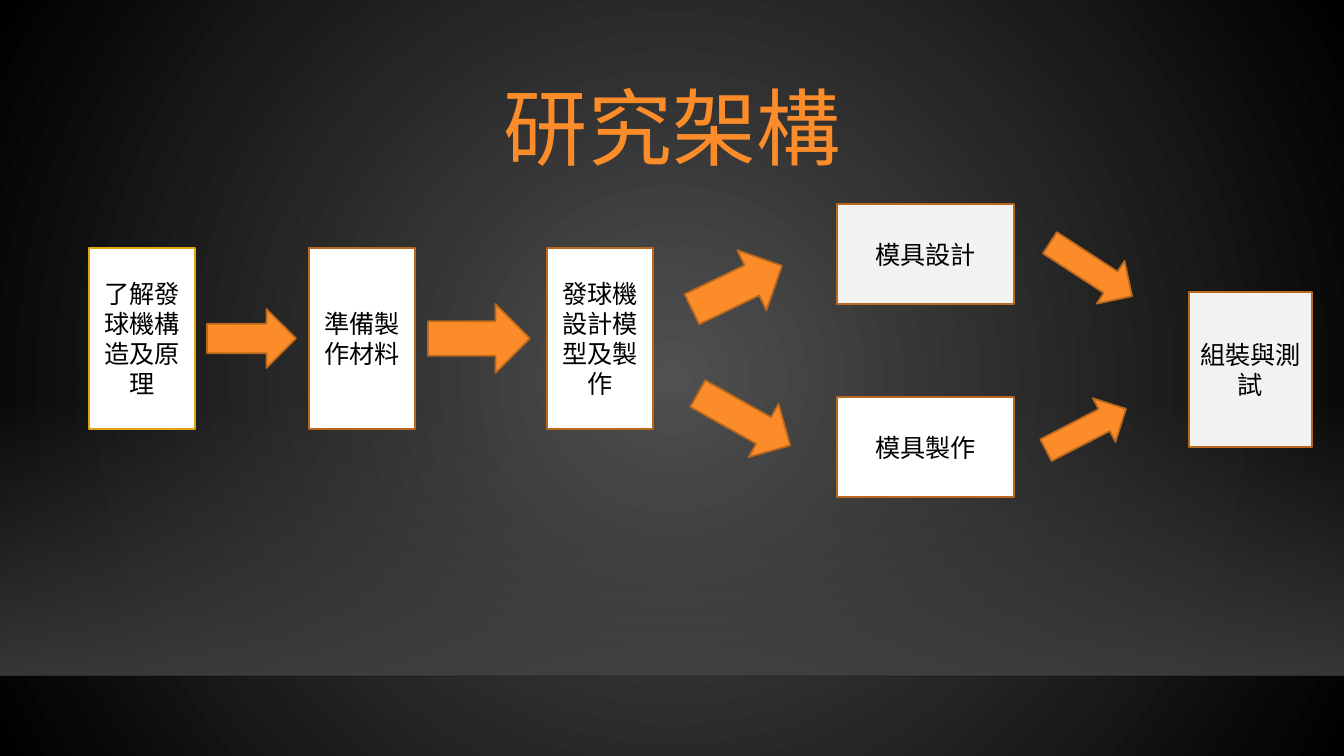
from lxml import etree
from pptx import Presentation
from pptx.dml.color import RGBColor
from pptx.enum.shapes import MSO_CONNECTOR, MSO_SHAPE
from pptx.enum.text import MSO_ANCHOR, PP_ALIGN
from pptx.oxml import parse_xml
from pptx.oxml.ns import nsdecls, qn
from pptx.util import Pt

PX = 914400 / 100.8
WIDTH, HEIGHT = 1344, 756
FONT = "TeX Gyre Bonum"
ORANGE, BROWN, WHITE, GREY = "FB8C29", "BA681E", "FFFFFF", "F2F2F2"
CIRCLE = '<a:path path="circle"><a:fillToRect l="50000" t="50000" r="50000" b="50000"/></a:path>'
DOWNWARD = '<a:lin ang="5400000" scaled="0"/>'


def px(*lengths):
    return [round(n * PX) for n in lengths]


def set_gradient(element, stops, direction):
    """Replace the gradient in element; stops are (position, colour, opacity) in percent."""
    old = element.find(".//" + qn("a:gradFill"))
    gs = "".join(
        f'<a:gs pos="{pos * 1000}"><a:srgbClr val="{color}">'
        f'<a:alpha val="{alpha * 1000}"/></a:srgbClr></a:gs>'
        for pos, color, alpha in stops)
    new = parse_xml(f'<a:gradFill {nsdecls("a")} rotWithShape="1">'
                    f'<a:gsLst>{gs}</a:gsLst>{direction}</a:gradFill>')
    old.getparent().replace(old, new)


rgb = RGBColor.from_string
prs = Presentation()
prs.slide_width, prs.slide_height = px(WIDTH, HEIGHT)
s = prs.slides.add_slide(prs.slide_layouts[6])

# Background, floor and its edge
s.background.fill.gradient()
set_gradient(s._element, [(0, "505050", 100), (100, "000000", 100)], CIRCLE)

floor = s.shapes.add_shape(MSO_SHAPE.RECTANGLE, *px(0, 399, WIDTH, 277))
floor.shadow.inherit = False
floor.line.fill.background()
floor.fill.gradient()
set_gradient(floor._element.spPr, [(0, "454545", 0), (100, "454545", 80)], DOWNWARD)

edge = s.shapes.add_connector(MSO_CONNECTOR.STRAIGHT, *px(0, 676, WIDTH, 676))
edge.line.width = Pt(1)
edge.line.color.rgb = rgb("000001")
edge_color = edge._element.spPr.find(".//" + qn("a:srgbClr"))
etree.SubElement(edge_color, qn("a:alpha")).set("val", "20000")
etree.SubElement(edge._element.spPr, qn("a:effectLst"))

# Title and steps: text, left, top, width, height, fill, line
title = s.shapes.add_textbox(*px(160, 60, 1024, 144))
texts = [(title, "研究架構", 60, ORANGE)]

steps = [
    ("了解發球機構造及原理", 89, 248, 106, 181, WHITE, "E1A511"),
    ("準備製作材料", 309, 248, 106, 181, WHITE, BROWN),
    ("發球機設計模型及製作", 547, 248, 106, 181, WHITE, BROWN),
    ("模具設計", 837, 204, 177, 100, GREY, BROWN),
    ("模具製作", 837, 397, 177, 100, WHITE, BROWN),
    ("組裝與測試", 1189, 292, 123, 155, GREY, BROWN),
]
for text, x, y, w, h, fill, line in steps:
    sp = s.shapes.add_shape(MSO_SHAPE.FLOWCHART_PROCESS, *px(x, y, w, h))
    sp.shadow.inherit = False
    sp.fill.solid()
    sp.fill.fore_color.rgb = rgb(fill)
    sp.line.color.rgb = rgb(line)
    sp.line.width = Pt(1.25)
    texts.append((sp, text, 18, "000000"))

for sp, text, size, color in texts:
    tf = sp.text_frame
    tf.word_wrap = True
    tf.vertical_anchor = MSO_ANCHOR.MIDDLE
    p = tf.paragraphs[0]
    p.alignment = PP_ALIGN.CENTER
    r = p.add_run()
    r.text = text
    r.font.name = FONT
    r.font.size = Pt(size)
    r.font.color.rgb = rgb(color)
title.text_frame.paragraphs[0].line_spacing = 0.9

# Arrows: left, top, width, height, rotation
arrows = [
    (207, 309, 89, 59, 0),
    (428, 304, 102, 69, 0),
    (687, 254, 100, 67, 334.2),
    (691, 389, 106, 61, 29.3),
    (1041, 405, 90, 49, 332.7),
    (1042, 244, 98, 51, 33),
]
for x, y, w, h, rotation in arrows:
    arrow = s.shapes.add_shape(MSO_SHAPE.RIGHT_ARROW, *px(x, y, w, h))
    arrow.rotation = rotation
    arrow.shadow.inherit = False
    arrow.fill.solid()
    arrow.fill.fore_color.rgb = rgb(ORANGE)
    arrow.line.color.rgb = rgb(BROWN)
    arrow.line.width = Pt(1.25)

prs.save("out.pptx")
